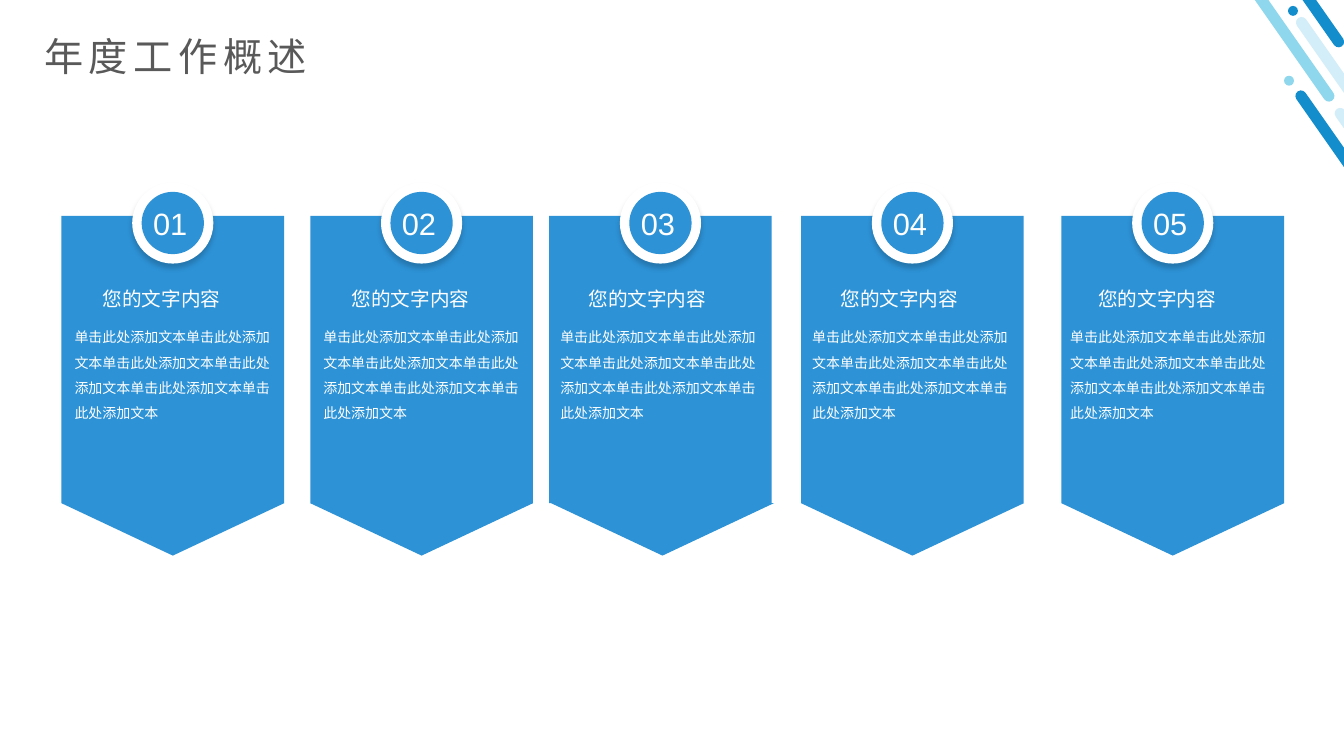
from lxml import etree
from pptx import Presentation
from pptx.dml.color import RGBColor
from pptx.enum.shapes import MSO_SHAPE
from pptx.enum.text import MSO_ANCHOR, PP_ALIGN
from pptx.oxml import parse_xml
from pptx.oxml.ns import qn
from pptx.util import Cm, Pt

RECT, OVAL = MSO_SHAPE.RECTANGLE, MSO_SHAPE.OVAL
ROUND, WEDGE = MSO_SHAPE.ROUNDED_RECTANGLE, MSO_SHAPE.ISOSCELES_TRIANGLE
LEFT, TOP, MIDDLE = PP_ALIGN.LEFT, MSO_ANCHOR.TOP, MSO_ANCHOR.MIDDLE

TITLE = "年度工作概述"
HEAD = "您的文字内容"
BODY = "单击此处添加文本" * 6
SANS, CJK = "Arial", "Noto Sans CJK SC"
BLUE, WHITE, GREY = "2D92D6", "FFFFFF", "595959"
DEEP, AQUA, PALE = "138DCC", "8FD7ED", "D3EEF9"

# number, left of card, left of wedge, left of text (cm)
CARDS = [
    ("01", 1.55, 1.55, 1.63),
    ("02", 7.82, 7.82, 7.90),
    ("03", 13.84, 13.89, 13.87),
    ("04", 20.19, 20.19, 20.22),
    ("05", 26.75, 26.75, 26.72),
]
CARD_W, CARD_TOP, CARD_H, WEDGE_H = 5.61, 5.44, 7.24, 1.32
RING, DISC, RING_MID = 2.01, 1.57, 5.62

# left, top, length, colour
BARS = [
    (34.16, 1.80, 5.56, DEEP),
    (35.15, 2.24, 5.56, PALE),
    (31.42, -3.84, 7.01, AQUA),
    (34.59, -0.18, 7.01, PALE),
    (32.08, -3.89, 5.56, DEEP),
]
DOTS = [(32.36, 1.91, AQUA), (32.46, 0.15, DEEP)]
BAR_W, DOT, TILT = 0.28, 0.25, 325

SHADOW = (
    '<a:effectLst xmlns:a="http://schemas.openxmlformats.org/drawingml/2006/main">'
    '<a:outerShdw blurRad="50800" dist="38100" dir="5400000" algn="t" rotWithShape="0">'
    '<a:srgbClr val="000000"><a:alpha val="18000"/></a:srgbClr>'
    "</a:outerShdw></a:effectLst>"
)


def rgb(code):
    return RGBColor.from_string(code)


def draw(home, kind, x, y, w, h, fill, turn=0):
    shape = home.add_shape(kind, Cm(x), Cm(y), Cm(w), Cm(h))
    shape.shadow.inherit = False
    shape.fill.solid()
    shape.fill.fore_color.rgb = rgb(fill)
    shape.line.fill.background()
    shape.rotation = turn
    return shape


def write(box, text, size, color=WHITE, font=CJK, anchor=TOP, gap=None, space=None, before=None):
    """Fill a text box or placeholder; gap is letter spacing in points."""
    frame = box.text_frame
    frame.word_wrap = True
    frame.vertical_anchor = anchor
    para = frame.paragraphs[0]
    para.alignment = LEFT
    if space:
        para.line_spacing = space
    if before:
        para.space_before = Pt(before)
    run = para.add_run()
    run.text = text
    run.font.size = Pt(size)
    run.font.name = font
    run.font.color.rgb = rgb(color)
    props = run.font._element
    etree.SubElement(props, qn("a:ea")).set("typeface", font)
    if gap:
        props.set("spc", str(gap * 100))


def label(home, x, y, w, h, text, size, **form):
    write(home.add_textbox(Cm(x), Cm(y), Cm(w), Cm(h)), text, size, **form)


def corner(shapes):
    group = shapes.add_group_shape().shapes
    for x, y, size, color in BARS:
        draw(group, ROUND, x, y, BAR_W, size, color, TILT).adjustments[0] = 0.5
    for x, y, color in DOTS:
        draw(group, OVAL, x, y, DOT, DOT, color)


def card(shapes, num, left, tip, text):
    draw(shapes, RECT, left, CARD_TOP, CARD_W, CARD_H, BLUE)
    draw(shapes, WEDGE, tip, CARD_TOP + CARD_H, CARD_W, WEDGE_H, BLUE, 180)
    mid = left + CARD_W / 2
    ring = draw(shapes, OVAL, mid - RING / 2, RING_MID - RING / 2, RING, RING, WHITE)
    ring.line.color.rgb = rgb(WHITE)
    ring.line.width = Pt(1)
    props = ring._element.spPr
    props.replace(props.find(qn("a:effectLst")), parse_xml(SHADOW))
    draw(shapes, OVAL, mid - DISC / 2, RING_MID - DISC / 2, DISC, DISC, BLUE)
    label(shapes, left + 2.06, 5.03, 1.47, 1.19, num, 22, font=SANS)
    label(shapes, text, 7.95, CARD_W, 3.78, BODY, 10, space=1.5, before=13.3)
    label(shapes, text + 0.71, 7.09, 4.22, 0.86, HEAD, 14, anchor=MIDDLE)


def main():
    deck = Presentation()
    deck.slide_width, deck.slide_height = Cm(33.87), Cm(19.05)
    slide = deck.slides.add_slide(deck.slide_layouts[5])
    corner(slide.shapes)
    title = slide.shapes.title
    title.left, title.top, title.width, title.height = Cm(0.86), Cm(0.69), Cm(33.07), Cm(1.45)
    write(title, TITLE, 28, color=GREY, anchor=MIDDLE, gap=4)
    for row in CARDS:
        card(slide.shapes, *row)
    deck.save("out.pptx")


if __name__ == "__main__":
    main()
